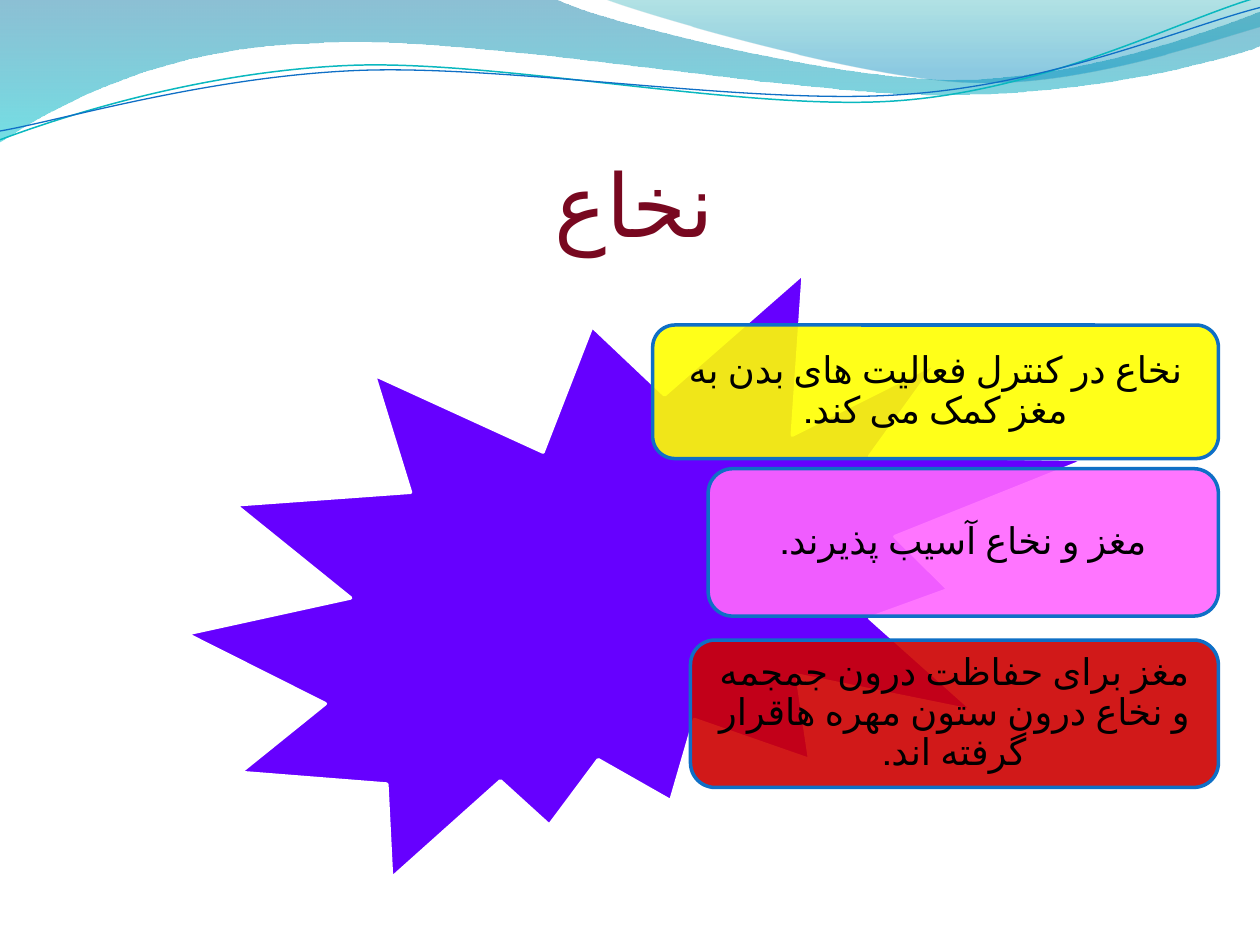
from lxml import etree
from pptx import Presentation
from pptx.dml.color import RGBColor
from pptx.enum import lang, shapes, text
from pptx.oxml import ns
from pptx.util import Inches, Pt

THEME = {
    "title": "780820", "ink": "000000", "edge": "0F6FC6", "teal": "0AB8BF",
    "seal": "6600FF", "white": "FFFFFF", "head": "Calibri", "body": "Vollkorn",
    "big": 50, "mid": 21, "line": 2,
}
TITLE = ("نخاع", (0.5, 0.77, 9, 1.25))
SEAL = (1.48, 2.17, 7.15, 4.8)
RIGHT = 9.67
CARDS = [
    ("نخاع در کنترل فعالیت های بدن به مغز کمک می کند.", "FFFF00", 2.58, 4.49, 1.06),
    ("مغز و نخاع آسیب پذیرند.", "FF66FF", 3.72, 4.05, 1.17),
    ("مغز برای حفاظت درون جمجمه و نخاع درون ستون مهره هاقرار گرفته اند.",
     "CC0000", 5.08, 4.19, 1.17),
]
# Each path is a list of points (2 numbers) and cubic curves (6 numbers).
WAVES = [
    ([(0, 0), (4.4, -0.01), (4.76, 0.17, 6.64, 0.63, 7.58, 0.63),
      (8.53, 0.63, 9.58, 0.26, 10, 0.09), (10.01, 0.36),
      (9.83, 0.44, 8.7, 0.76, 7.46, 0.75), (6.22, 0.75, 3.82, 0.28, 2.57, 0.34),
      (1.29, 0.36, 0.46, 0.83, -0.01, 1.13)],
     [(0, "0074A1", 45), (1, "00C6CF", 55)]),
    ([(4.79, -0.01), (5.09, 0.11, 6.82, 0.62, 7.69, 0.65),
      (8.56, 0.69, 9.61, 0.32, 10, 0.21), (10, 0)],
     [(0, "00A1A9", 30), (0.8, "008BBF", 45)]),
]
LINES = [
    ([(0, 1.11), (0.48, 0.93, 1.58, 0.57, 2.77, 0.52),
      (3.95, 0.47, 5.93, 0.89, 7.13, 0.8), (8.33, 0.71, 9.38, 0.15, 9.98, -0.02)],
     THEME["teal"], 0.85),
    ([(0, 1.04), (0.47, 0.96, 1.64, 0.61, 2.83, 0.56),
      (4.03, 0.51, 5.97, 0.84, 7.17, 0.75), (8.36, 0.67, 9.41, 0.21, 10, 0.06)],
     THEME["edge"], 0.75),
]


def rgb(name):
    return RGBColor.from_string(name)


def fade(clr, pct):
    etree.SubElement(clr, ns.qn("a:alpha")).set("val", str(pct * 1000))


def draw(slide, path, close):
    pts = [(Inches(seg[i]), Inches(seg[i + 1]))
           for seg in path for i in range(0, len(seg), 2)]
    pen = slide.shapes.build_freeform(*pts[0])
    pen.add_line_segments(pts[1:], close=close)
    form = pen.convert_to_shape()
    form.shadow.inherit = False
    legs = iter(list(form.element.iter(ns.qn("a:lnTo"))))
    for seg in path[1:]:
        first = next(legs)
        if len(seg) == 6:
            bend = etree.Element(ns.qn("a:cubicBezTo"))
            first.addprevious(bend)
            for leg in (first, next(legs), next(legs)):
                bend.append(leg[0])
                leg.getparent().remove(leg)
    return form


def wave(slide, path, stops):
    form = draw(slide, path, True)
    form.fill.gradient()
    form.fill.gradient_angle = 270
    for stop, (pos, color, _) in zip(form.fill.gradient_stops, stops):
        stop.position = pos
        stop.color.rgb = rgb(color)
    for clr, (_, _, pct) in zip(list(form.element.iter(ns.qn("a:srgbClr"))), stops):
        fade(clr, pct)
    form.line.fill.background()


def curve(slide, path, color, width):
    form = draw(slide, path, False)
    form.fill.background()
    form.line.color.rgb = rgb(color)
    form.line.width = Pt(width)


def block(slide, kind, box, fill, edge, alpha=100):
    form = slide.shapes.add_shape(kind, *map(Inches, box))
    form.shadow.inherit = False
    form.fill.solid()
    form.fill.fore_color.rgb = rgb(fill)
    if alpha < 100:
        fade(next(form.element.iter(ns.qn("a:srgbClr"))), alpha)
    form.line.color.rgb = rgb(edge)
    form.line.width = Pt(THEME["line"])
    return form


def write(form, words, *, font, size, color, anchor, pad, gap=1.0):
    frame = form.text_frame
    frame.word_wrap = True
    frame.vertical_anchor = anchor
    (frame.margin_left, frame.margin_top,
     frame.margin_right, frame.margin_bottom) = map(Inches, pad)
    para = frame.paragraphs[0]
    para.alignment = text.PP_ALIGN.CENTER
    para.line_spacing = gap
    para._p.get_or_add_pPr().set("rtl", "1")
    run = para.add_run()
    run.text = words
    run.font.size = Pt(size)
    run.font.color.rgb = rgb(color)
    run.font.name = font
    run.font.language_id = lang.MSO_LANGUAGE_ID.FARSI


def main():
    """Build the spinal cord slide and save it."""
    deck = Presentation()
    deck.slide_width, deck.slide_height = Inches(10), Inches(7.5)
    slide = deck.slides.add_slide(deck.slide_layouts[6])
    for item in WAVES:
        wave(slide, *item)
    for item in LINES:
        curve(slide, *item)
    words, box = TITLE
    write(slide.shapes.add_textbox(*map(Inches, box)), words, font=THEME["head"],
          size=THEME["big"], color=THEME["title"], anchor=text.MSO_ANCHOR.BOTTOM,
          pad=(0.06, 0.05, 0, 0))
    kind = shapes.MSO_SHAPE
    block(slide, kind.EXPLOSION2, SEAL, THEME["seal"], THEME["white"])
    for words, fill, top, wide, high in CARDS:
        card = block(slide, kind.ROUNDED_RECTANGLE, (RIGHT - wide, top, wide, high),
                     fill, THEME["edge"], alpha=90)
        write(card, words, font=THEME["body"], size=THEME["mid"], color=THEME["ink"],
              anchor=text.MSO_ANCHOR.MIDDLE, pad=(0.09,) * 4, gap=0.9)
    deck.save("out.pptx")


if __name__ == "__main__":
    main()
